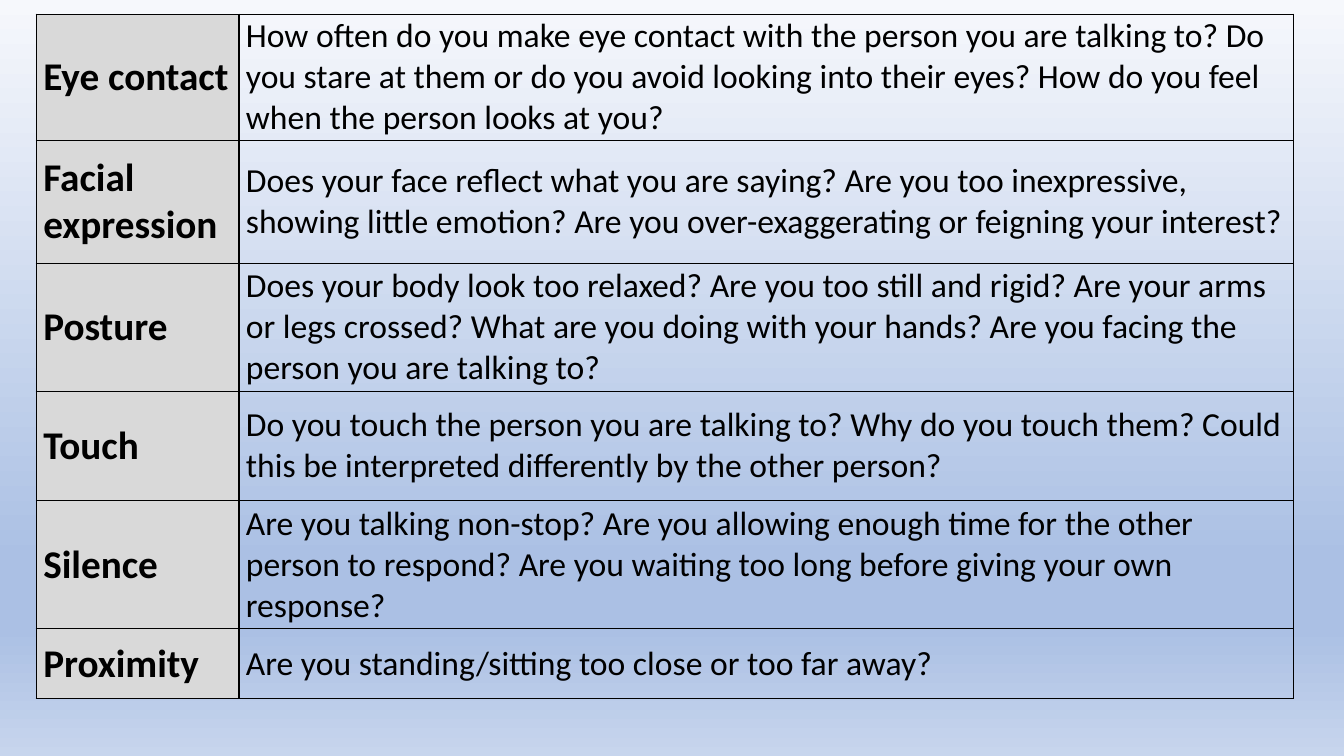
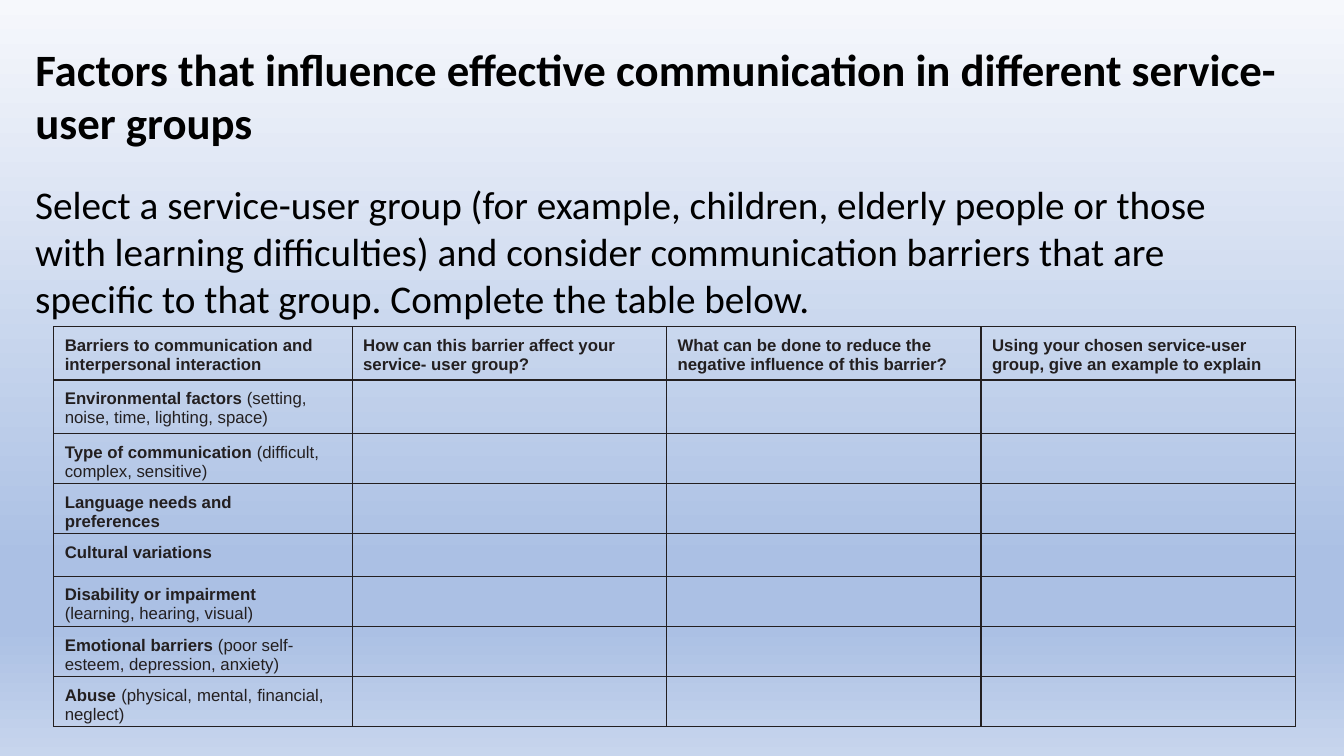
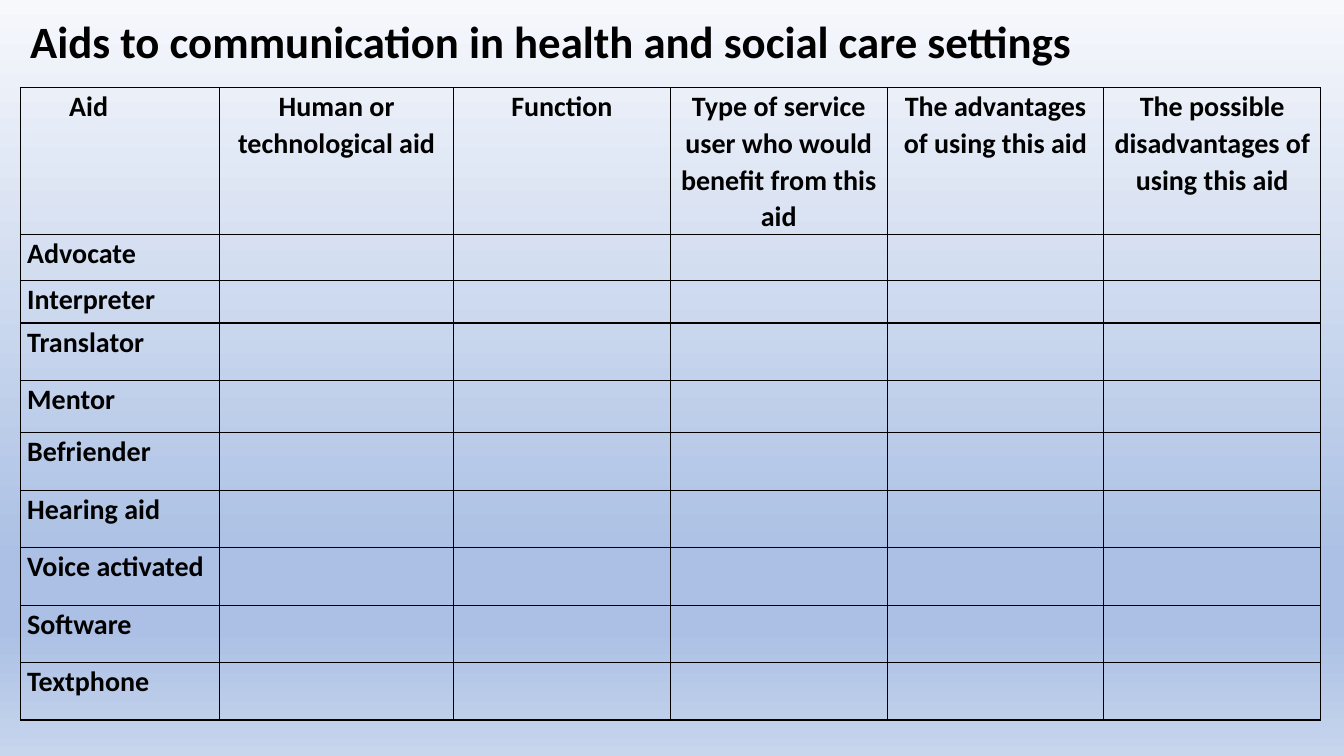
"""Builds three slides on interpersonal communication: a checklist and two worksheets."""
from dataclasses import dataclass

from pptx import Presentation
from pptx.dml.color import RGBColor
from pptx.enum.text import MSO_ANCHOR, MSO_AUTO_SIZE, PP_ALIGN
from pptx.oxml import parse_xml
from pptx.oxml.ns import nsdecls, qn
from pptx.util import Inches, Pt


@dataclass(frozen=True)
class Theme:
    font: str = "Calibri"
    form: str = "Arial"
    ink: str = "000000"
    soft: str = "231F20"
    label: str = "D9D9D9"
    sky: tuple = ((0, "F6F8FC"), (74, "ABC0E4"), (83, "ABC0E4"), (100, "C7D5ED"))
    title: int = 32
    head: int = 28
    body: int = 24
    aid: int = 20
    small: int = 12


look = Theme()
deck = Presentation()
deck.slide_width, deck.slide_height = Inches(13.33), Inches(7.5)
wide, high = deck.slide_width / 100, deck.slide_height / 100


def write(frame, text, size, bold=False, tail="", font=look.font, ink=look.ink):
    para = frame.paragraphs[0]
    para.text = text
    if tail:
        para.add_run().text = tail
    for spot, run in enumerate(para.runs):
        run.font.size, run.font.name = Pt(size), font
        run.font.bold = bold and spot == 0
        run.font.color.rgb = RGBColor.from_string(ink)
    return para


def grid(slide, left, top, cols, rows, ink):
    frame = slide.shapes.add_table(
        len(rows), len(cols), int(left * wide), int(top * high),
        int(sum(cols) * wide), int(sum(rows) * high))
    table = frame.table
    table.first_row = table.horz_banding = False
    for col, share in zip(table.columns, cols):
        col.width = int(share * wide)
    for row, share in zip(table.rows, rows):
        row.height = int(share * high)
    for cell in table.iter_cells():
        cell.margin_left = cell.margin_right = Inches(0.07)
        cell.margin_top = cell.margin_bottom = 0
        cell.fill.background()
        props = cell._tc.get_or_add_tcPr()
        for spot, side in enumerate("LRTB"):
            props.insert(spot, parse_xml(
                f'<a:ln{side} {nsdecls("a")} w="12700"><a:solidFill>'
                f'<a:srgbClr val="{ink}"/></a:solidFill></a:ln{side}>'))
    return table


master = deck.slide_master
fill = master.background.fill
fill.gradient()
fill.gradient_angle = 270
stops = master.element.find(".//" + qn("a:gsLst"))
for stop in list(stops):
    stops.remove(stop)
for place, tint in look.sky:
    stops.append(parse_xml(
        f'<a:gs {nsdecls("a")} pos="{place * 1000}"><a:srgbClr val="{tint}"/></a:gs>'))

bare, titled = deck.slide_layouts[6], deck.slide_layouts[5]
cues = [
    ("Eye contact", "How often do you make eye contact with the person you are talking to? Do you stare at them or do you avoid looking into their eyes? How do you feel when the person looks at you?"),
    ("Facial expression", "Does your face reflect what you are saying? Are you too inexpressive, showing little emotion? Are you over-exaggerating or feigning your interest?"),
    ("Posture", "Does your body look too relaxed? Are you too still and rigid? Are your arms or legs crossed? What are you doing with your hands? Are you facing the person you are talking to?"),
    ("Touch", "Do you touch the person you are talking to? Why do you touch them? Could this be interpreted differently by the other person?"),
    ("Silence", "Are you talking non-stop? Are you allowing enough time for the other person to respond? Are you waiting too long before giving your own response?"),
    ("Proximity", "Are you standing/sitting too close or too far away?"),
]
table = grid(deck.slides.add_slide(bare), 2.7, 1.87, [15.08, 78.47],
             [16.67, 16.27, 16.93, 14.53, 16.93, 9.2], look.ink)
for row, pair in enumerate(cues):
    for col, (text, size, gap) in enumerate(zip(pair, (look.head, look.body), (3, 1.5))):
        cell = table.cell(row, col)
        cell.vertical_anchor = MSO_ANCHOR.MIDDLE
        para = write(cell.text_frame, text, size, col == 0)
        para.space_before = para.space_after = Pt(gap)
    name = table.cell(row, 0)
    name.fill.solid()
    name.fill.fore_color.rgb = RGBColor.from_string(look.label)

sheets = []
for text, left, top, width, height in [
    ("Factors that influence effective communication in different service-user groups",
     1.88, 4.8, 94.45, 16),
    ("Aids to communication in health and social care settings", 1.5, 1.2, 83.35, 8.53),
]:
    slide = deck.slides.add_slide(titled)
    title = slide.shapes.title
    title.left, title.top = int(left * wide), int(top * high)
    title.width, title.height = int(width * wide), int(height * high)
    frame = title.text_frame
    frame.auto_size = MSO_AUTO_SIZE.NONE
    frame.vertical_anchor = MSO_ANCHOR.TOP
    write(frame, text, look.title, True).alignment = PP_ALIGN.LEFT
    sheets.append(slide)
needs, aids = sheets

task = needs.shapes.add_textbox(int(1.88 * wide), int(23.2 * high),
                                int(94.45 * wide), int(20 * high)).text_frame
task.word_wrap = True
write(task, "Select a service-user group (for example, children, elderly people or those with learning difficulties) and consider communication barriers that are specific to that group. Complete the table below.", look.head)

asks = ["Barriers to communication and interpersonal interaction",
        "How can this barrier affect your service- user group?",
        "What can be done to reduce the negative influence of this barrier?",
        "Using your chosen service-user group, give an example to explain"]
bars = [("Environmental factors ", "(setting, noise, time, lighting, space)"),
        ("Type of communication ", "(difficult, complex, sensitive)"),
        ("Language needs and preferences", ""),
        ("Cultural variations", ""),
        ("Disability or impairment ", "(learning, hearing, visual)"),
        ("Emotional barriers ", "(poor self-esteem, depression, anxiety)"),
        ("Abuse ", "(physical, mental, financial, neglect)")]
table = grid(needs, 4, 43.2, [22.2] + [23.4] * 3,
             [7.07] * 2 + [6.6] * 2 + [5.6] + [6.6] * 3, look.soft)
items = [(0, col, ask, "") for col, ask in enumerate(asks)]
items += [(row, 0, *bar) for row, bar in enumerate(bars, 1)]
for row, col, text, tail in items:
    cell = table.cell(row, col)
    cell.margin_left, cell.margin_top = Inches(0.11), Inches(0.09)
    cell.margin_right = Inches(0.07 if col else 0.28)
    para = write(cell.text_frame, text, look.small, True, tail, look.form, look.soft)
    para.line_spacing = 1.02
para.alignment = PP_ALIGN.JUSTIFY

heads = ["Aid", "Human or technological aid", "Function",
         "Type of service user who would benefit from this aid",
         "The advantages of using this aid", "The possible disadvantages of using this aid"]
kinds = ["Advocate", "Interpreter", "Translator", "Mentor", "Befriender",
         "Hearing aid", "Voice activated", "Software", "Textphone"]
table = grid(aids, 1.5, 11.6, [14.85, 17.4] + [16.13] * 4,
             [19.4, 6.13, 5.6, 7.6, 6.93] + [7.6] * 5, look.ink)
for col, text in enumerate(heads):
    para = write(table.cell(0, col).text_frame, text, look.aid, True)
    para.alignment, para.line_spacing = PP_ALIGN.CENTER, 1.07
table.cell(0, 0).margin_right = Inches(0.69)
for row, text in enumerate(kinds, 1):
    write(table.cell(row, 0).text_frame, text, look.aid, True).line_spacing = 1.07

deck.save("out.pptx")
